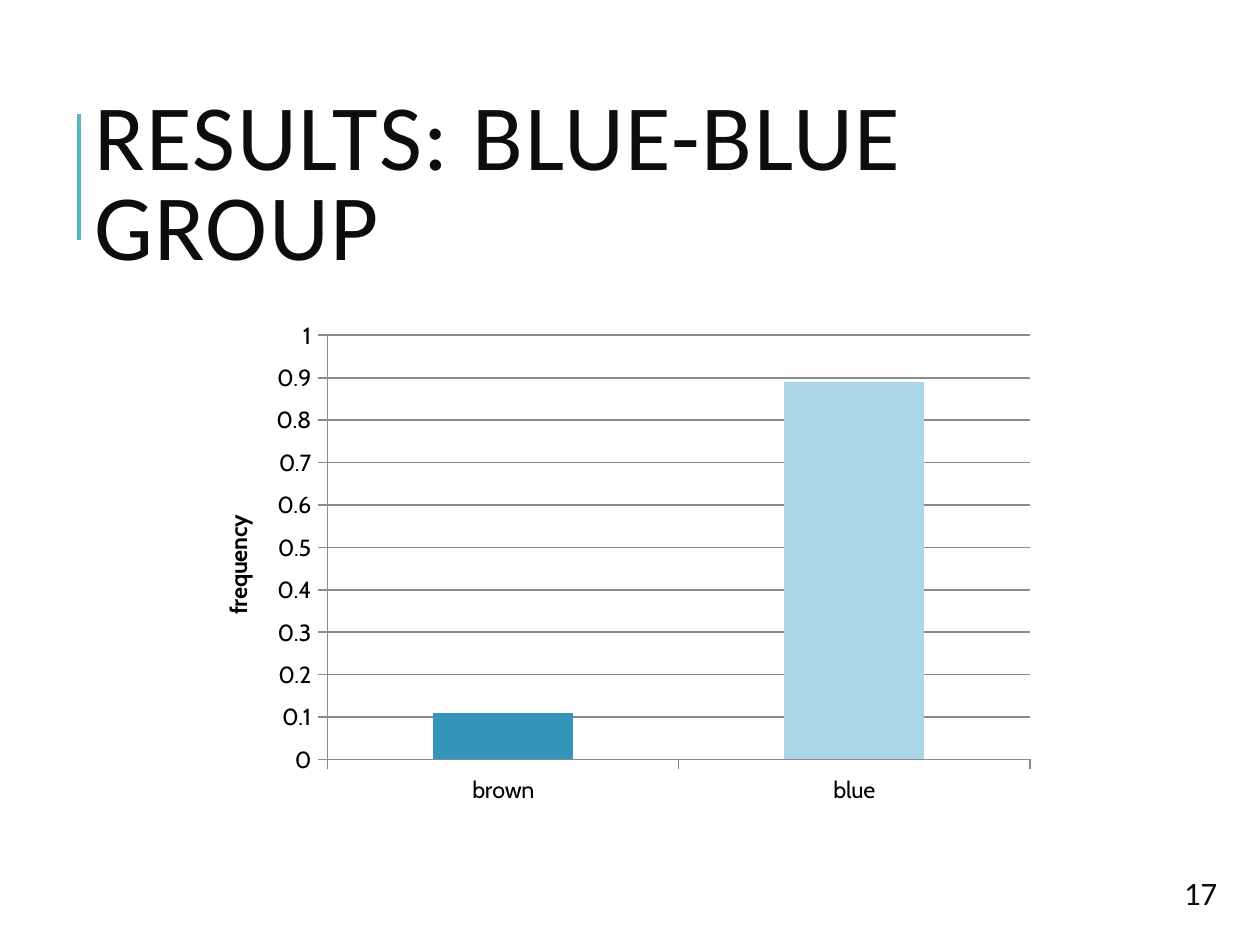
from lxml import etree
from pptx import Presentation
from pptx.chart.data import CategoryChartData
from pptx.dml.color import RGBColor
from pptx.enum.chart import XL_CHART_TYPE, XL_TICK_MARK
from pptx.enum.shapes import MSO_CONNECTOR
from pptx.enum.text import MSO_ANCHOR, MSO_AUTO_SIZE, PP_ALIGN
from pptx.oxml import parse_xml
from pptx.oxml.ns import nsdecls, qn
from pptx.util import Inches, Pt

COLUMNS = XL_CHART_TYPE.COLUMN_CLUSTERED
TICK_OUTSIDE = XL_TICK_MARK.OUTSIDE
STRAIGHT = MSO_CONNECTOR.STRAIGHT
TOP, MIDDLE = MSO_ANCHOR.TOP, MSO_ANCHOR.MIDDLE
NO_AUTOFIT = MSO_AUTO_SIZE.NONE
LEFT = PP_ALIGN.LEFT
TITLE_ONLY = 5

SLIDE_WIDTH = Inches(7.5)
SLIDE_HEIGHT = SLIDE_WIDTH * 3 // 4  # 4:3 page
INK, BLACK = "0D0D0D", "000000"
ACCENT, AXIS_GRAY = "58B6C0", "8B8B8B"
BROWN_BAR, BLUE_BAR = "3494BA", "AAD6E7"
PLOT_AREA = {"x": 0.15, "y": 0.042, "w": 0.836, "h": 0.842}


def rgb(hex_color):
    return RGBColor.from_string(hex_color)


def set_font(font, name, size, color, bold=False):
    font.name, font.size, font.bold = name, Pt(size), bold
    font.color.rgb = rgb(color)


def write_text(box, text, size, anchor):
    """Write one left-aligned run and return its paragraph and run."""
    frame = box.text_frame
    frame.word_wrap = True
    frame.auto_size = NO_AUTOFIT
    frame.vertical_anchor = anchor
    frame.margin_left = frame.margin_right = Inches(0.1)
    frame.margin_top = frame.margin_bottom = Inches(0.1)
    paragraph = frame.paragraphs[0]
    paragraph.alignment = LEFT
    run = paragraph.add_run()
    run.text = text
    set_font(run.font, "Calibri", size, INK)
    return paragraph, run


def add_accent_line(slide):
    accent = slide.shapes.add_connector(
        STRAIGHT, Inches(0.47), Inches(1.43), Inches(0.47), Inches(0.68))
    accent.line.color.rgb = rgb(ACCENT)
    accent.line.width = Pt(1.5)
    etree.SubElement(accent._element.spPr, qn("a:effectLst"))


def add_title(slide, text):
    title = slide.shapes.title
    title.left, title.top = Inches(0.46), Inches(0.49)
    title.width, title.height = Inches(6.78), Inches(0.63)
    paragraph, run = write_text(title, text, 40, TOP)
    paragraph.line_spacing = 0.8
    run.font._element.set("spc", "75")


def add_page_number(slide, number):
    box = slide.shapes.add_textbox(
        Inches(6.95), Inches(5.1), Inches(0.45), Inches(0.43))
    write_text(box, number, 14, MIDDLE)


def fix_plot_area(chart):
    """Place the inner plot area by fractions of the chart."""
    modes = "".join(f'<c:{side}Mode val="edge"/>' for side in "xy")
    sizes = "".join(f'<c:{key} val="{value}"/>' for key, value in PLOT_AREA.items())
    layout = parse_xml(
        f'<c:layout {nsdecls("c")}><c:manualLayout><c:layoutTarget val="inner"/>'
        f'{modes}{sizes}</c:manualLayout></c:layout>')
    plot_area = chart._chartSpace.chart.plotArea
    for old_layout in plot_area.findall(qn("c:layout")):
        plot_area.remove(old_layout)
    plot_area.insert(0, layout)


def style_line(line):
    line.color.rgb = rgb(AXIS_GRAY)
    line.width = Pt(0.75)


def add_frequency_chart(slide):
    data = CategoryChartData()
    data.categories = ["brown", "blue"]
    data.add_series("Series 1", (0.11, 0.89))
    chart = slide.shapes.add_chart(
        COLUMNS, Inches(1.2), Inches(1.87), Inches(5), Inches(3), data).chart
    chart.has_legend = chart.has_title = False
    set_font(chart.font, "Cabin", 10, BLACK)
    fix_plot_area(chart)

    # Axes
    frequency_axis = chart.value_axis
    for axis in (chart.category_axis, frequency_axis):
        axis.major_tick_mark = TICK_OUTSIDE
        style_line(axis.format.line)
    frequency_axis.minimum_scale, frequency_axis.maximum_scale = 0, 1
    frequency_axis.major_unit = 0.1
    frequency_axis.has_major_gridlines = True
    style_line(frequency_axis.major_gridlines.format.line)
    label = frequency_axis.axis_title.text_frame.paragraphs[0].add_run()
    label.text = "frequency "
    set_font(label.font, "Cabin", 10, BLACK, bold=True)

    # Bars
    plot = chart.plots[0]
    plot.gap_width = 150
    plot.vary_by_categories = False
    series = plot.series[0]
    for bar, color in ((series, BROWN_BAR), (series.points[1], BLUE_BAR)):
        bar.format.fill.solid()
        bar.format.fill.fore_color.rgb = rgb(color)


def main():
    deck = Presentation()
    deck.slide_width, deck.slide_height = SLIDE_WIDTH, SLIDE_HEIGHT
    slide = deck.slides.add_slide(deck.slide_layouts[TITLE_ONLY])
    add_accent_line(slide)
    add_title(slide, "RESULTS: BLUE-BLUE GROUP")
    add_page_number(slide, "17")
    add_frequency_chart(slide)
    deck.save("out.pptx")


if __name__ == "__main__":
    main()
